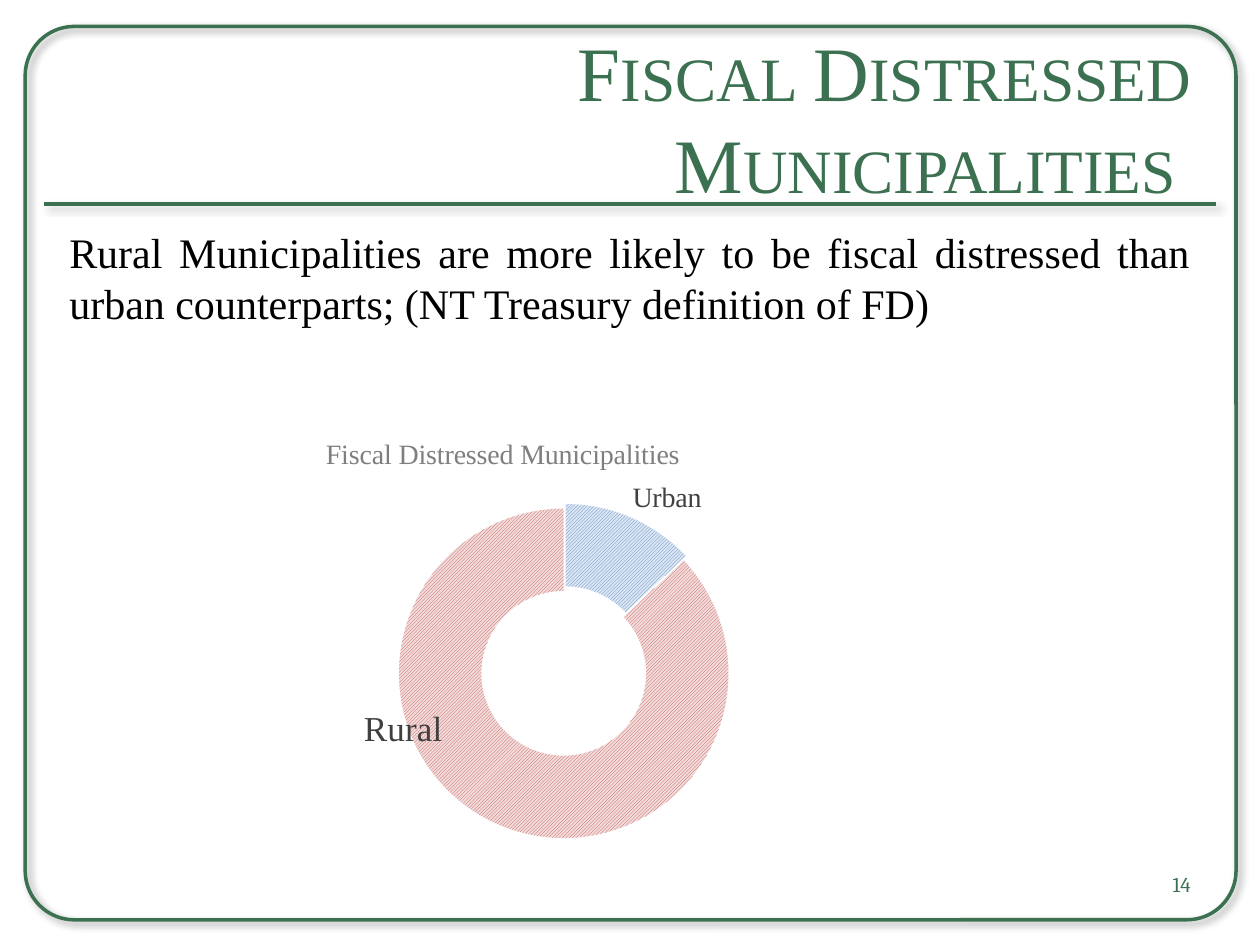
from lxml.etree import SubElement
from pptx import Presentation
from pptx.chart.data import CategoryChartData
from pptx.dml.color import RGBColor
from pptx.enum.chart import XL_CHART_TYPE
from pptx.enum.dml import MSO_PATTERN
from pptx.enum.shapes import MSO_CONNECTOR, MSO_SHAPE
from pptx.enum.text import MSO_ANCHOR, PP_ALIGN
from pptx.oxml import parse_xml
from pptx.oxml.ns import nsdecls, qn
from pptx.util import Pt

HUES = {
    "green": "3B7150", "black": "000000", "title": "7F7F7F", "label": "404040",
    "blue": "4F81BD", "pale_blue": "DCE6F2", "red": "C0504D", "pale_red": "F2DCDB",
}
SERIF = "Times New Roman"


def paint(hue):
    return RGBColor.from_string(HUES[hue])


def style(font, hue, **format):
    for name, value in format.items():
        setattr(font, name, value)
    font.color.rgb = paint(hue)


def rule(shape):
    """Give a shape the green outline and its soft shadow."""
    shape.line.color.rgb = paint("green")
    shape.line.width = Pt(2)
    shape._element.spPr.append(parse_xml(
        f'<a:effectLst {nsdecls("a")}><a:outerShdw blurRad="{Pt(4)}" dist="{Pt(3)}" '
        'dir="2700000" algn="tl" rotWithShape="0"><a:srgbClr val="000000">'
        '<a:alpha val="40000"/></a:srgbClr></a:outerShdw></a:effectLst>'))


def add_frame(slide):
    frame = slide.shapes.add_shape(
        MSO_SHAPE.ROUNDED_RECTANGLE, Pt(14.4), Pt(15.1), Pt(691.9), Pt(510.5))
    frame.adjustments[0] = 0.055
    frame.fill.background()
    rule(frame)
    rule(slide.shapes.add_connector(
        MSO_CONNECTOR.STRAIGHT, Pt(25.2), Pt(116.6), Pt(694.8), Pt(116.6)))


def add_text(slide, text, place, align, anchor, hue, **format):
    frame = slide.shapes.add_textbox(*map(Pt, place)).text_frame
    margins = dict.fromkeys(
        ("margin_left", "margin_right", "margin_top", "margin_bottom"), Pt(3.6))
    for name, value in {"word_wrap": True, "vertical_anchor": anchor, **margins}.items():
        setattr(frame, name, value)
    line = frame.paragraphs[0]
    line.alignment = align
    run = line.add_run()
    run.text = text
    style(run.font, hue, **format)
    return run


def lay_out(parent, index, **places):
    """Insert a manual layout into a chart part."""
    for old in parent.findall(qn("c:layout")):
        parent.remove(old)
    layout = parse_xml(f'<c:layout {nsdecls("c")}><c:manualLayout/></c:layout>')
    for name, value in places.items():
        SubElement(layout[0], qn(f"c:{name}")).set("val", str(value))
    parent.insert(index, layout)


def add_slice(series, index, fore, back, size, x, y):
    point = series.points[index]
    fill = point.format.fill
    fill.patterned()
    fill.pattern = MSO_PATTERN.LIGHT_UPWARD_DIAGONAL
    fill.fore_color.rgb = paint(fore)
    fill.back_color.rgb = paint(back)
    point.format.line.fill.background()
    style(point.data_label.font, "label", name=SERIF, size=Pt(size))
    label = series._element.xpath(f"c:dLbls/c:dLbl[c:idx/@val='{index}']")[0]
    for flag, value in (("showVal", "0"), ("showCatName", "1")):
        label.find(qn(f"c:{flag}")).set("val", value)
    lay_out(label, 1, x=x, y=y)


def add_ring(slide):
    data = CategoryChartData()
    data.categories = ["Urban ", "Rural"]
    data.add_series("Series 1", (13, 87))
    chart = slide.shapes.add_chart(
        XL_CHART_TYPE.DOUGHNUT, Pt(87.8), Pt(234), Pt(398.2), Pt(251.3), data).chart
    style(chart.font, "black", name="Cambria", size=Pt(10))
    chart.has_legend = False

    run = chart.chart_title.text_frame.paragraphs[0].add_run()
    run.text = "Fiscal Distressed Municipalities"
    style(run.font, "title", name=SERIF, size=Pt(16), bold=False)
    lay_out(chart.chart_title._element, 1, xMode="edge", yMode="edge", x=0.24, y=0.05)

    plot = chart.plots[0]
    plot.vary_by_categories = True
    plot._element.find(qn("c:holeSize")).set("val", "42")
    lay_out(plot._element.getparent(), 0, layoutTarget="inner", xMode="edge",
            yMode="edge", x=0.35, y=0.21, w=0.48, h=0.81)

    series = plot.series[0]
    labels = series.data_labels
    labels.show_category_name = True
    labels.show_value = False
    style(labels.font, "label", name="Cambria", size=Pt(9))
    add_slice(series, 0, "blue", "pale_blue", 16, 0.08, -0.13)
    add_slice(series, 1, "red", "pale_red", 20, -0.16, -0.13)
    burst = parse_xml(f'<c:explosion {nsdecls("c")} val="3"/>')
    series._element.find(qn("c:dPt")).addprevious(burst)


def main():
    deck = Presentation()
    deck.slide_width, deck.slide_height = Pt(720), Pt(540)
    slide = deck.slides.add_slide(deck.slide_layouts[6])
    add_frame(slide)
    title = add_text(
        slide, "Fiscal Distressed Municipalities ", (36, 7.2, 648, 118.8),
        PP_ALIGN.RIGHT, MSO_ANCHOR.MIDDLE, "green", name=SERIF, size=Pt(44))
    title.font._element.set("cap", "small")
    add_text(
        slide, "Rural Municipalities are more likely to be fiscal distressed than "
        "urban counterparts; (NT Treasury definition of FD)", (36, 126, 648, 414),
        PP_ALIGN.JUSTIFY, MSO_ANCHOR.TOP, "black", name=SERIF, size=Pt(24))
    add_ring(slide)
    add_text(slide, "14", (516.2, 494.6, 167.8, 21.6), PP_ALIGN.RIGHT,
             MSO_ANCHOR.MIDDLE, "green", name="Cambria", size=Pt(12))
    deck.save("out.pptx")


if __name__ == "__main__":
    main()
